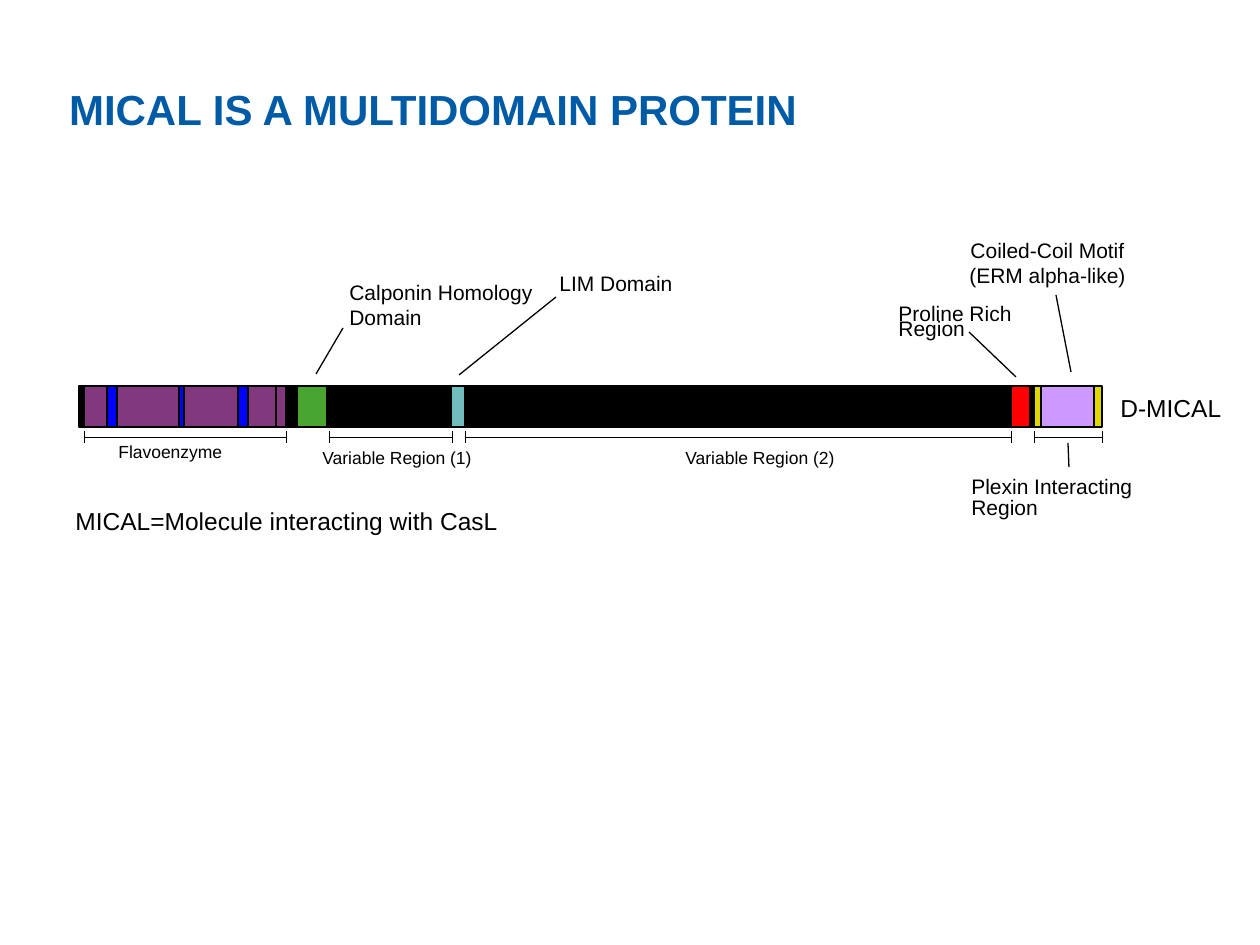
from dataclasses import dataclass

from lxml.etree import SubElement
from pptx import Presentation
from pptx.dml.color import RGBColor
from pptx.enum.shapes import MSO_CONNECTOR, MSO_SHAPE
from pptx.enum.text import MSO_ANCHOR, PP_ALIGN
from pptx.oxml.ns import qn
from pptx.util import Emu, Pt


@dataclass(frozen=True)
class Theme:
    font: str = "Arial"
    title: str = "005BA7"
    ink: str = "000000"
    flavo: str = "82387D"
    motif: str = "0000FF"
    calponin: str = "48A530"
    lim: str = "71BDBE"
    proline: str = "FF0000"
    plexin: str = "DFD700"
    coil: str = "CC99FF"
    title_size: int = 24
    name_size: int = 14
    label_size: int = 12
    region_size: int = 10
    outline: float = 0.75
    bracket: float = 0.5


theme = Theme()
rgb = RGBColor.from_string
PX = 914400 / 126


def px(*lengths):
    return [Emu(round(length * PX)) for length in lengths]


def add_line(x1, y1, x2, y2, width):
    line = page.shapes.add_connector(MSO_CONNECTOR.STRAIGHT, *px(x1, y1, x2, y2))
    line.line.color.rgb = rgb(theme.ink)
    line.line.width = Pt(width)
    SubElement(line._element.spPr, qn("a:effectLst"))


deck = Presentation()
deck.slide_width, deck.slide_height = px(1260, 945)
page = deck.slides.add_slide(deck.slide_layouts[5])

# Title
title = page.shapes.title
title.left, title.top, title.width, title.height = px(63, 30, 1134, 158)
frame = title.text_frame
frame.text = "MICAL IS A MULTIDOMAIN PROTEIN"
frame.vertical_anchor = MSO_ANCHOR.MIDDLE
frame.margin_left, frame.margin_right, frame.margin_top, frame.margin_bottom = px(6, 6, 6, 6)
para = frame.paragraphs[0]
para.alignment = PP_ALIGN.LEFT
span = para.runs[0]
span.font.name = theme.font
span.font.size = Pt(theme.title_size)
span.font.bold = True
span.font.color.rgb = rgb(theme.title)

# Protein bar and its domains, back to front: left, width, colour
BAR_TOP, BAR_HEIGHT = 386, 41
domains = [
    (79, 955, theme.ink),
    (1034, 68, theme.plexin),
    (451, 14, theme.lim),
    (84, 192, theme.flavo),
    (1011, 19, theme.proline),
    (107, 10, theme.motif),
    (297, 30, theme.calponin),
    (1041, 53, theme.coil),
    (84, 23, theme.flavo),
    (276, 10, theme.flavo),
    (179, 5, theme.motif),
    (238, 10, theme.motif),
]
for left, width, colour in domains:
    domain = page.shapes.add_shape(
        MSO_SHAPE.RECTANGLE, *px(left, BAR_TOP, width, BAR_HEIGHT))
    domain.shadow.inherit = False
    domain.fill.solid()
    domain.fill.fore_color.rgb = rgb(colour)
    domain.line.color.rgb = rgb(theme.ink)
    domain.line.width = Pt(theme.outline)

# Brackets under the regions
BRACKET_Y, TICK = 437, 6
for start, end in [(84, 286), (329, 452), (465, 1011), (1034, 1102)]:
    add_line(start, BRACKET_Y, end, BRACKET_Y, theme.bracket)
    for x in (start, end):
        add_line(x, BRACKET_Y - TICK, x, BRACKET_Y + TICK, theme.bracket)

# Leaders from labels to domains
leaders = [
    (1056, 295, 1071, 372),
    (969, 332, 1016, 377),
    (556, 297, 459, 375),
    (343, 328, 316, 374),
    (1068, 443, 1069, 467),
]
for leader in leaders:
    add_line(*leader, theme.outline)

# Labels: lines, box, size, alignment, pitch of the second line in points
left, center = PP_ALIGN.LEFT, PP_ALIGN.CENTER
labels = [
    ("Coiled-Coil Motif (ERM alpha-like)", (937, 231, 221, 63), theme.label_size, center, None),
    ("Plexin Interacting\nRegion", (959, 467, 189, 58), theme.label_size, left, 12),
    ("Proline Rich\nRegion", (886, 294, 160, 53), theme.label_size, left, 9),
    ("LIM Domain", (547, 264, 234, 38), theme.label_size, left, None),
    ("Calponin Homology Domain", (337, 273, 234, 63), theme.label_size, left, None),
    ("Flavoenzyme", (106, 435, 234, 34), theme.region_size, left, None),
    ("Variable Region (1)", (310, 441, 234, 34), theme.region_size, left, None),
    ("Variable Region (2)", (673, 441, 234, 34), theme.region_size, left, None),
    ("D-MICAL", (1108, 387, 151, 42), theme.name_size, left, None),
    ("MICAL=Molecule interacting with CasL", (63, 500, 451, 42), theme.name_size, left, None),
]
for text, place, size, alignment, pitch in labels:
    box = page.shapes.add_textbox(*px(*place))
    frame = box.text_frame
    frame.word_wrap = True
    frame.text = text
    for index, para in enumerate(frame.paragraphs):
        para.alignment = alignment
        if index and pitch:
            para.line_spacing = Pt(pitch)
        for span in para.runs:
            span.font.name = theme.font
            span.font.size = Pt(size)
            span.font.color.rgb = rgb(theme.ink)

deck.save("out.pptx")
